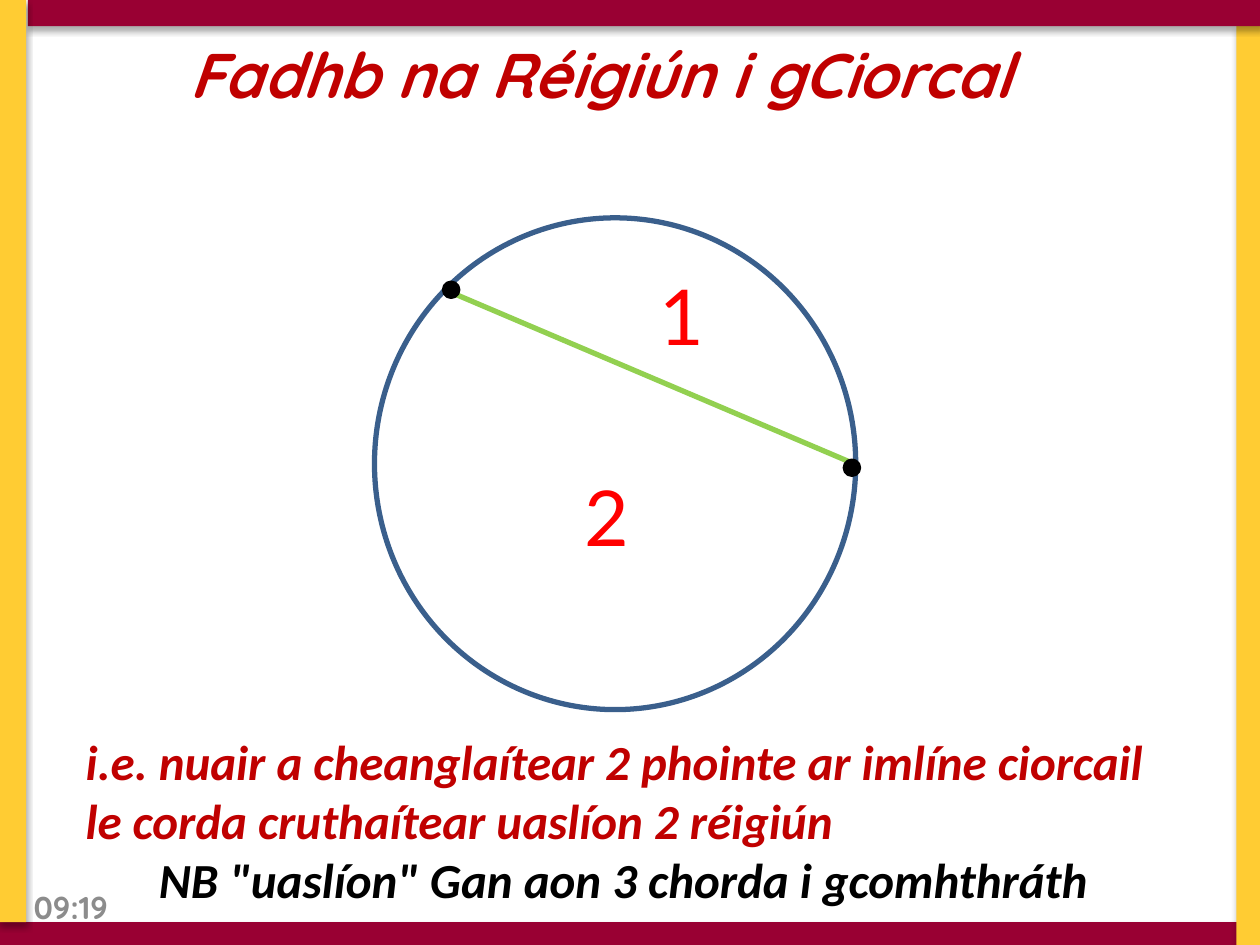
from lxml.etree import SubElement
from pptx import Presentation
from pptx.dml.color import RGBColor
from pptx.enum.shapes import MSO_CONNECTOR as CONN, MSO_SHAPE as SHAPE
from pptx.enum.text import MSO_ANCHOR as ANCHOR, PP_ALIGN as ALIGN
from pptx.oxml.ns import qn
from pptx.util import Pt

C = {"maroon": "990033", "gold": "FFCC33", "white": "FFFFFF", "rim": "3A5F8C",
     "chord": "92D050", "black": "000000", "number": "FF0000",
     "heading": "C00000", "clock": "8C8C8C"}


def rgb(name):
    """Return the named colour."""
    return RGBColor.from_string(C[name])


def add_shape(s, kind, box, fill, line=None, width=0):
    """Add a filled preset shape, outlined only if a line colour is given."""
    sp = s.shapes.add_shape(kind, *map(Pt, box))
    sp.shadow.inherit = False
    sp.fill.solid()
    sp.fill.fore_color.rgb = rgb(fill)
    if line:
        sp.line.color.rgb = rgb(line)
        sp.line.width = Pt(width)
    else:
        sp.line.fill.background()
    return sp


def add_text(s, box, lines, size, font, bold=False, italic=False,
             left=7.2, anchor=ANCHOR.TOP):
    """Add a text box from (text, colour, alignment) lines."""
    tf = s.shapes.add_textbox(*map(Pt, box)).text_frame
    tf.word_wrap = True
    tf.margin_left = Pt(left)
    tf.vertical_anchor = anchor
    for i, (text, color, align) in enumerate(lines):
        p = tf.paragraphs[0] if i == 0 else tf.add_paragraph()
        p.text = text
        p.alignment = align
        p.font.name, p.font.size = font, Pt(size)
        p.font.bold, p.font.italic = bold, italic
        p.font.color.rgb = rgb(color)


def add_shadow(sp):
    """Give a shape a soft shadow falling downwards."""
    effects = sp._element.spPr.find(qn("a:effectLst"))
    shadow = SubElement(effects, qn("a:outerShdw"), blurRad=str(Pt(3.5)),
                        dist=str(Pt(2.2)), dir="5400000", rotWithShape="0")
    color = SubElement(shadow, qn("a:srgbClr"), val=C["black"])
    SubElement(color, qn("a:alpha"), val="32000")


def add_frame(s, x, y, w, h, bar=15):
    """Border the box with maroon horizontal and gold vertical bars."""
    for box, fill in (((x, y + h - 13, w, bar), "maroon"),
                      ((x + w - 13.5, y + bar, bar, h - 13), "gold"),
                      ((x + 16, y, w - bar, bar), "maroon"),
                      ((x, y, bar, h - 13), "gold")):
        add_shadow(add_shape(s, SHAPE.RECTANGLE, box, fill))


def add_circle(s, x, y, w, h, dot=8.6):
    """Draw the circle, its chord with end dots, and the region numbers."""
    add_shape(s, SHAPE.OVAL, (x, y, w, h), "white", "rim", 3)
    chord = s.shapes.add_connector(CONN.STRAIGHT, Pt(x + 40), Pt(y + 41),
                                   Pt(x + 274), Pt(y + 140.5))
    chord.line.color.rgb = rgb("chord")
    chord.line.width = Pt(3)
    SubElement(chord._element.spPr, qn("a:effectLst"))
    for dx, dy in ((39.5, 36.8), (268.5, 138.5)):
        add_shape(s, SHAPE.OVAL, (x + dx, y + dy, dot, dot), "black", "black", 2)
    for number, dx, dy in (("1", 156, 25.3), ("2", 113, 140.5)):
        add_text(s, (x + dx, y + dy, 50, 60.5),
                 [(number, "number", ALIGN.LEFT)], 44, "Lato")


def add_words(s, x, y, w, h):
    """Place the title, explanation and clock within the box."""
    add_text(s, (x + 41.8, y + 414.7, w - 85, 108.7),
             [("i.e. nuair a cheanglaítear 2 phointe ar imlíne ciorcail "
               "le corda cruthaítear uaslíon 2 réigiún", "heading", ALIGN.LEFT),
              ('NB "uaslíon" Gan aon 3 chorda i gcomhthráth ', "black",
               ALIGN.CENTER)], 28, "Calibri", True, True)
    add_text(s, (x + 19.4, y + 16.6, w - 36, 51),
             [("Fadhb na Réigiún i gCiorcal", "heading", ALIGN.LEFT)],
             36, "Quicksand", True, True, left=89)
    add_text(s, (x + 12.2, y + h - 36, 67, 28.8), [("09:19", "clock", ALIGN.LEFT)],
             18, "Quicksand", True, anchor=ANCHOR.MIDDLE)


def main():
    """Build and save the slide."""
    prs = Presentation()
    prs.slide_width, prs.slide_height = Pt(720), Pt(540)
    s = prs.slides.add_slide(prs.slide_layouts[6])
    add_frame(s, 0, 0, 720, 540)
    add_circle(s, 214, 124.5, 275, 281)
    add_words(s, 0, 0, 720, 540)
    prs.save("out.pptx")


if __name__ == "__main__":
    main()
